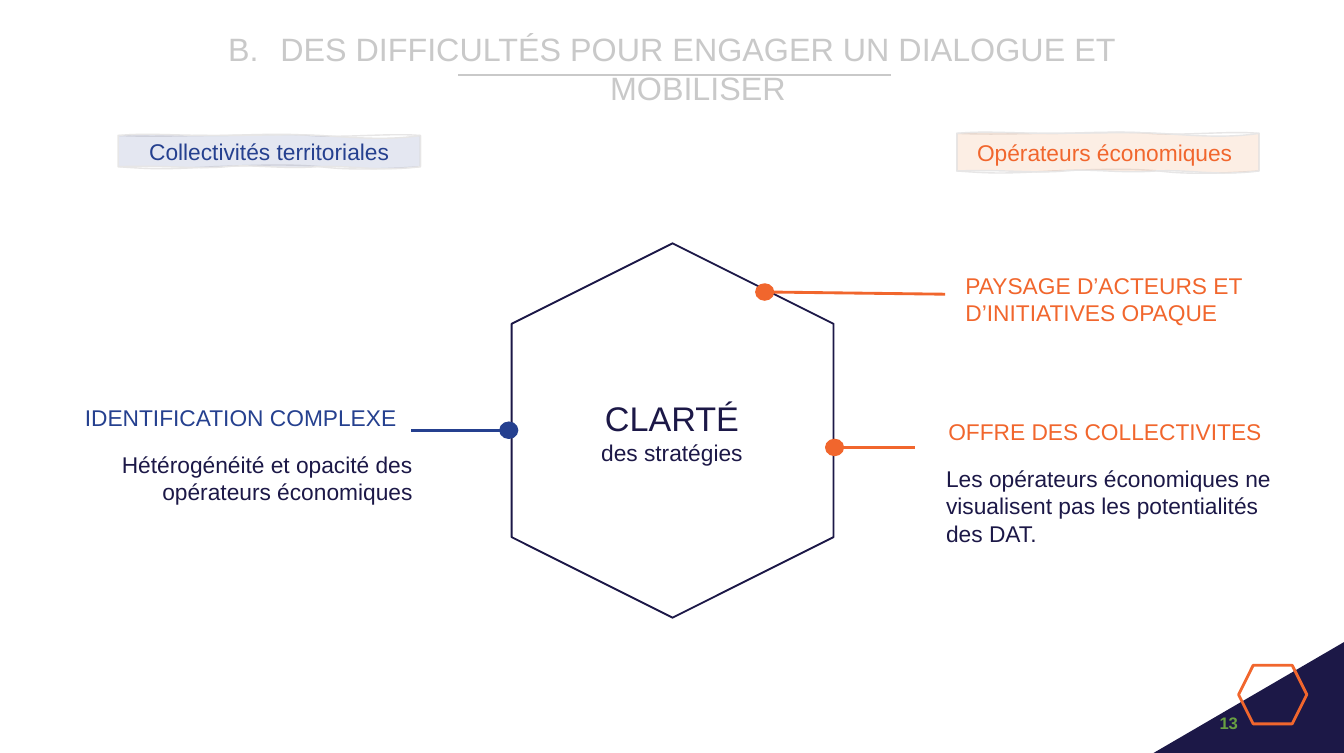
from lxml import etree
from pptx import Presentation
from pptx.dml.color import RGBColor
from pptx.enum.shapes import MSO_CONNECTOR, MSO_SHAPE
from pptx.enum.text import MSO_ANCHOR, MSO_AUTO_SIZE, PP_ALIGN
from pptx.oxml.ns import qn
from pptx.util import Cm, Pt

LEFT, CENTER, RIGHT = PP_ALIGN.LEFT, PP_ALIGN.CENTER, PP_ALIGN.RIGHT
TOP, MIDDLE = MSO_ANCHOR.TOP, MSO_ANCHOR.MIDDLE
GROW, FIXED = MSO_AUTO_SIZE.SHAPE_TO_FIT_TEXT, MSO_AUTO_SIZE.NONE
STRAIGHT = MSO_CONNECTOR.STRAIGHT
HEXAGON, TRIANGLE = MSO_SHAPE.HEXAGON, MSO_SHAPE.RIGHT_TRIANGLE
DOT = MSO_SHAPE.FLOWCHART_CONNECTOR

THEME = {
    "font": "Arial",
    "navy": RGBColor.from_string("1C1847"),
    "blue": RGBColor.from_string("25408F"),
    "orange": RGBColor.from_string("F1662D"),
    "amber": RGBColor.from_string("ED7D31"),
    "grey": RGBColor.from_string("C9C9C9"),
    "pale": RGBColor.from_string("E7E6E6"),
    "green": RGBColor.from_string("68A042"),
    "title": Pt(17),
    "heading": Pt(18),
    "body": Pt(12),
    "number": Pt(8.8),
}


def write(frame, lines, color, align, anchor=TOP, auto_size=GROW, bold=None):
    """Fill a text frame with (text, theme size) lines."""
    for name, value in {"word_wrap": True, "vertical_anchor": anchor,
                        "auto_size": auto_size}.items():
        setattr(frame, name, value)
    for index, (text, size) in enumerate(lines):
        para = frame.add_paragraph() if index else frame.paragraphs[0]
        para.alignment = align
        span = para.add_run()
        span.text = text
        for name, value in {"name": THEME["font"], "size": THEME[size],
                            "bold": bold}.items():
            setattr(span.font, name, value)
        span.font.color.rgb = THEME[color]


def paint(item, line=None, width=0.75, fill=None):
    """Set line and fill, and remove the shadow, of a shape or connector."""
    if hasattr(item, "fill"):
        item.shadow.inherit = False
        if fill:
            item.fill.solid()
            item.fill.fore_color.rgb = THEME[fill]
        else:
            item.fill.background()
    if line:
        item.line.color.rgb = THEME[line]
        item.line.width = Pt(width)
    else:
        item.line.fill.background()
    if not hasattr(item, "fill"):
        etree.SubElement(item.element.spPr, qn("a:effectLst"))


deck = Presentation()
deck.slide_width, deck.slide_height = Cm(25), Cm(14)
page = deck.slides.add_slide(deck.slide_layouts[6])

# Central hexagon
hexagon = page.shapes.add_shape(HEXAGON, Cm(9.03), Cm(5.01), Cm(6.96), Cm(5.99))
hexagon.rotation = 90
paint(hexagon, "navy", 1)

# Pointers: a dot on the hexagon and a line towards its text
DOT_WIDTH, DOT_HEIGHT = 0.33, 0.3
pointers = [
    ("orange", 14.06, 5.28, (14.38, 5.43), (17.58, 5.47)),
    ("blue", 9.3, 7.85, (9.3, 8), (7.65, 8)),
    ("orange", 15.36, 8.17, (15.69, 8.32), (17.02, 8.32)),
]
for color, left, top, start, end in pointers:
    pointer = page.shapes.add_group_shape().shapes
    paint(pointer.add_connector(STRAIGHT, *map(Cm, start + end)), color, 1.5)
    dot = pointer.add_shape(DOT, Cm(left), Cm(top), Cm(DOT_WIDTH), Cm(DOT_HEIGHT))
    paint(dot, color, fill=color)

# Texts around the hexagon
texts = [
    ((9.63, 7.27, 5.74, 1.55), "navy", CENTER,
     [("CLARTÉ", "heading"), ("des stratégies", "body")]),
    ((17.71, 4.93, 7.16, 1.27), "orange", LEFT,
     [("PAYSAGE D’ACTEURS ET D’INITIATIVES OPAQUE", "body")]),
    ((17.35, 8.52, 6.58, 1.8), "navy", LEFT,
     [("Les opérateurs économiques ne visualisent pas les potentialités des DAT.",
       "body")]),
    ((17.39, 7.65, 7.42, 0.76), "orange", LEFT,
     [("OFFRE DES COLLECTIVITES", "body")]),
    ((0.71, 7.39, 6.92, 0.76), "blue", RIGHT,
     [("IDENTIFICATION COMPLEXE", "body")]),
    ((1.35, 8.25, 6.58, 1.27), "navy", RIGHT,
     [("Hétérogénéité et opacité des opérateurs économiques", "body")]),
]
for place, color, align, lines in texts:
    box = page.shapes.add_textbox(*map(Cm, place))
    write(box.text_frame, lines, color, align)

# Corner decoration
corner = page.shapes.add_shape(TRIANGLE, Cm(21.46), Cm(11.94), Cm(3.54), Cm(2.06))
corner.element.spPr.get_or_add_xfrm().set("flipH", "1")
paint(corner, fill="navy")
badge = page.shapes.add_shape(HEXAGON, Cm(23.04), Cm(12.37), Cm(1.27), Cm(1.09))
paint(badge, "orange", 1.5)

# Title, lettered from B, and its rule
title = page.shapes.add_textbox(Cm(2.58), Cm(0.42), Cm(19.84), Cm(0.99))
write(title.text_frame,
      [("DES DIFFICULTÉS POUR ENGAGER UN DIALOGUE ET MOBILISER", "title")],
      "grey", CENTER)
lettering = title.text_frame.paragraphs[0]._p.get_or_add_pPr()
lettering.set("marL", str(Cm(0.97)))
lettering.set("indent", str(-Cm(0.97)))
bullet_color = etree.SubElement(lettering, qn("a:buClr"))
etree.SubElement(bullet_color, qn("a:srgbClr"), val=str(THEME["grey"]))
etree.SubElement(lettering, qn("a:buAutoNum"), type="alphaUcPeriod", startAt="2")
rule = page.shapes.add_connector(STRAIGHT, Cm(8.52), Cm(1.4), Cm(16.57), Cm(1.4))
paint(rule, "grey", 1)

# Hand-drawn labels: Bézier points (distance from left, wobble) of each edge
LABEL_WIDTH = 5.62
sketches = [
    ([(0, 0), (0.64, 0.03), (1.27, 0), (1.78, 0), (2.29, 0),
      (3, -0.05), (3.58, 0), (4.19, 0.05), (5.05, -0.05), (5.62, 0)],
     [(5.62, 0), (5.18, 0.03), (4.34, 0.08), (3.76, 0), (3.18, -0.05),
      (2.64, -0.03), (1.78, 0), (0.89, 0.05), (0.66, 0.05), (0, 0)]),
    ([(0, 0), (0.53, -0.05), (0.99, 0), (1.83, 0), (2.64, 0),
      (3.23, -0.03), (3.76, 0), (4.29, 0.03), (4.98, 0.1), (5.62, 0)],
     [(5.62, 0), (4.8, 0.1), (4.37, -0.03), (3.71, 0), (3.02, 0.05),
      (2.49, -0.05), (2.01, 0), (1.5, 0.05), (0.89, -0.03), (0, 0)]),
]
labels = [
    ("Collectivités territoriales", 2.2, 2.52, 0.58, "blue", "blue", 12),
    ("Opérateurs économiques ", 17.8, 2.48, 0.7, "amber", "orange", 13),
]
for text, left, top, height, fill, color, opacity in labels:
    right, bottom = left + LABEL_WIDTH, top + height
    builder = page.shapes.build_freeform(Cm(left), Cm(top))
    builder.add_line_segments([(Cm(right), Cm(top)), (Cm(right), Cm(bottom)),
                               (Cm(left), Cm(bottom))], close=True)
    label = builder.convert_to_shape()
    paint(label, "pale", fill=fill)
    tint = label.element.spPr.find(qn("a:solidFill")).find(qn("a:srgbClr"))
    etree.SubElement(tint, qn("a:alpha"), val=str(opacity * 1000))

    # Bend the rectangle into two wavy outlines, the first without fill
    outlines = next(label.element.spPr.iter(qn("a:pathLst")))
    for straight in list(outlines):
        outlines.remove(straight)
    for sketch, mode in zip(sketches, ("none", "norm")):
        outline = etree.SubElement(outlines, qn("a:path"), w=str(label.width),
                                   h=str(label.height), fill=mode)
        for edge, tag, offset in zip(sketch, ("a:moveTo", "a:lnTo"), (0, height)):
            pieces = [(tag, edge[:1])]
            pieces += [("a:cubicBezTo", edge[first:first + 3])
                       for first in range(1, len(edge), 3)]
            for piece_tag, points in pieces:
                piece = etree.SubElement(outline, qn(piece_tag))
                for x, wobble in points:
                    etree.SubElement(piece, qn("a:pt"), x=str(Cm(x)),
                                     y=str(Cm(offset + wobble)))
        etree.SubElement(outline, qn("a:close"))
    write(label.text_frame, [(text, "body")], color, CENTER, MIDDLE, FIXED)

number = page.shapes.add_textbox(Cm(17.67), Cm(13.07), Cm(5.61), Cm(0.74))
write(number.text_frame, [("13", "number")], "green", RIGHT, MIDDLE, FIXED, True)

deck.save("out.pptx")
